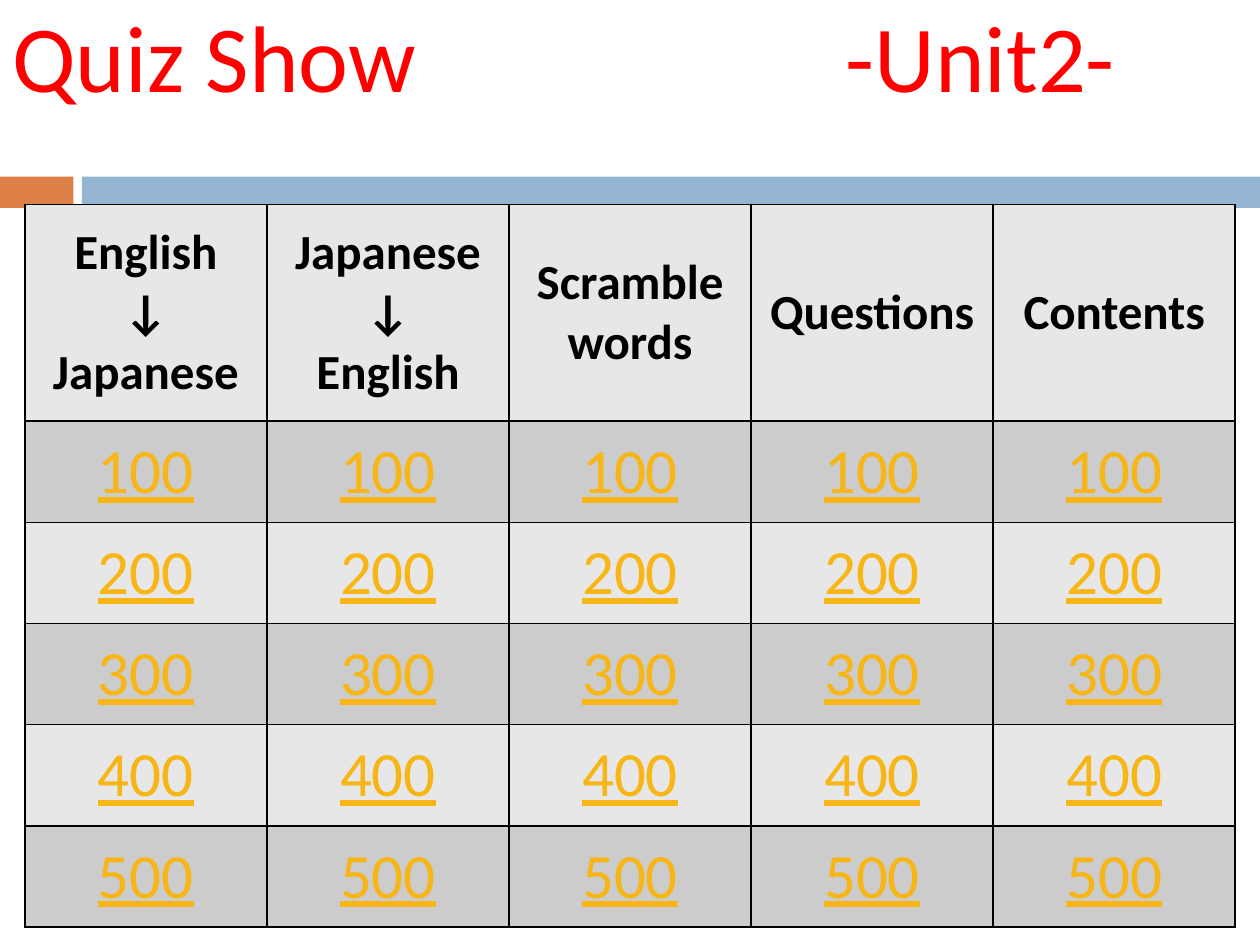
from lxml import etree
from pptx import Presentation
from pptx.dml.color import RGBColor
from pptx.enum.shapes import MSO_SHAPE
from pptx.enum.text import MSO_ANCHOR, PP_ALIGN
from pptx.oxml.ns import qn
from pptx.util import Cm, Pt

RECTANGLE = MSO_SHAPE.RECTANGLE
MIDDLE = MSO_ANCHOR.MIDDLE
CENTER = PP_ALIGN.CENTER

FONT = "Calibri"
TITLE = "Quiz Show\t-Unit2-"
TITLE_TAB = Cm(16.8)
CATEGORIES = [
    ["English", "↓", "Japanese"],
    ["Japanese", "↓", "English"],
    ["Scramble words"],
    ["Questions"],
    ["Contents"],
]
POINTS = [100, 200, 300, 400, 500]

RED, BLACK, GOLD = "FF0000", "000000", "F7B615"
ROW_FILLS = ["E7E7E7", "CCCCCC"]
# left, width, colour
BANDS = [(0, 1.48, "DD8047"), (1.65, 23.75, "94B6D2")]
BAND_TOP, BAND_HEIGHT = 3.56, 0.63
TABLE_LEFT, TABLE_TOP = 0.5, 4.12
COLUMN_WIDTH, HEADER_HEIGHT, ROW_HEIGHT = 4.88, 4.37, 2.04


def color(value):
    return RGBColor.from_string(value)


def add_run(paragraph, text, size, text_color, bold=False, underline=False):
    run = paragraph.add_run()
    run.text = text
    run.font.name = FONT
    run.font.size = Pt(size)
    run.font.bold = bold
    run.font.underline = underline
    run.font.color.rgb = color(text_color)


def add_borders(cell):
    properties = cell._tc.get_or_add_tcPr()
    for side in ("lnL", "lnR", "lnT", "lnB"):
        line = etree.SubElement(properties, qn(f"a:{side}"), w=str(Pt(1)))
        fill = etree.SubElement(line, qn("a:solidFill"))
        etree.SubElement(fill, qn("a:srgbClr"), val=BLACK)


def fill_cell(cell, lines, fill, **style):
    add_borders(cell)
    cell.fill.solid()
    cell.fill.fore_color.rgb = color(fill)
    cell.vertical_anchor = MIDDLE
    frame = cell.text_frame
    for index, text in enumerate(lines):
        paragraph = frame.add_paragraph() if index else frame.paragraphs[0]
        paragraph.alignment = CENTER
        add_run(paragraph, text, **style)


def add_bands(slide):
    for left, width, fill in BANDS:
        band = slide.shapes.add_shape(
            RECTANGLE, Cm(left), Cm(BAND_TOP), Cm(width), Cm(BAND_HEIGHT))
        band.shadow.inherit = False
        band.fill.solid()
        band.fill.fore_color.rgb = color(fill)
        band.line.fill.background()


def add_title(slide):
    title = slide.shapes.add_textbox(Cm(0), Cm(-0.08), Cm(25.4), Cm(2.36))
    frame = title.text_frame
    frame.word_wrap = True
    frame.vertical_anchor = MIDDLE
    paragraph = frame.paragraphs[0]
    tabs = etree.SubElement(paragraph._p.get_or_add_pPr(), qn("a:tabLst"))
    etree.SubElement(tabs, qn("a:tab"), pos=str(TITLE_TAB), algn="l")
    add_run(paragraph, TITLE, 54, RED)


def add_board(slide):
    columns, rows = len(CATEGORIES), len(POINTS) + 1
    table = slide.shapes.add_table(
        rows, columns, Cm(TABLE_LEFT), Cm(TABLE_TOP),
        Cm(columns * COLUMN_WIDTH),
        Cm(HEADER_HEIGHT + len(POINTS) * ROW_HEIGHT)).table
    table.first_row = False
    table.horz_banding = False
    for column in table.columns:
        column.width = Cm(COLUMN_WIDTH)
    for index, row in enumerate(table.rows):
        row.height = Cm(ROW_HEIGHT if index else HEADER_HEIGHT)

    for column, lines in enumerate(CATEGORIES):
        fill_cell(table.cell(0, column), lines, ROW_FILLS[0],
                  size=28, text_color=BLACK, bold=True)
        for row, points in enumerate(POINTS, start=1):
            fill_cell(table.cell(row, column), [str(points)], ROW_FILLS[row % 2],
                      size=36, text_color=GOLD, underline=True)


def main():
    presentation = Presentation()
    presentation.slide_width = Cm(25.4)
    presentation.slide_height = Cm(19.05)
    slide = presentation.slides.add_slide(presentation.slide_layouts[6])
    add_bands(slide)
    add_title(slide)
    add_board(slide)
    presentation.save("out.pptx")


if __name__ == "__main__":
    main()
